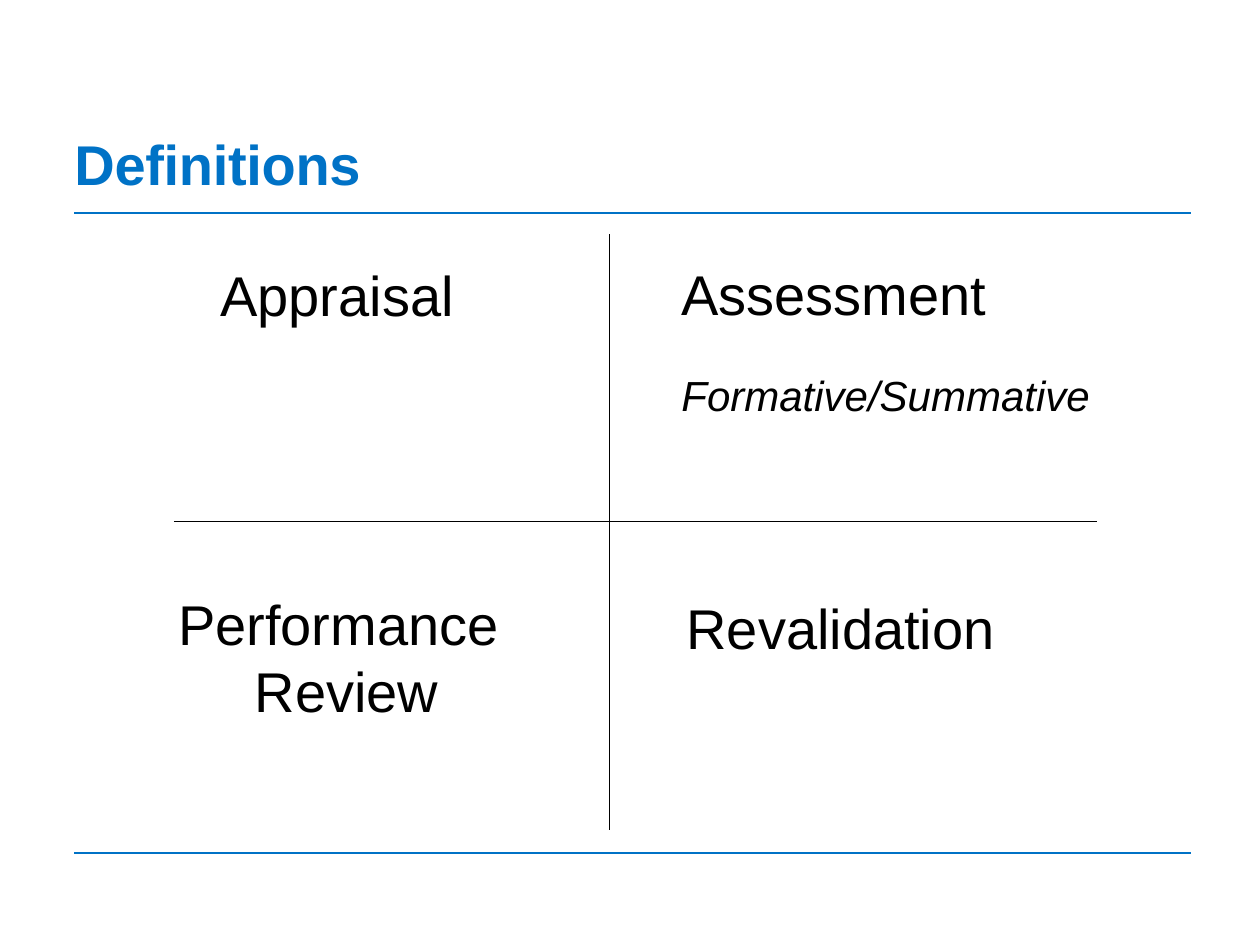
from typing import NamedTuple

from lxml.etree import SubElement
from pptx import Presentation
from pptx.dml.color import RGBColor
from pptx.enum.shapes import MSO_CONNECTOR
from pptx.enum.text import MSO_ANCHOR, MSO_AUTO_SIZE, PP_ALIGN
from pptx.oxml.ns import qn
from pptx.util import Inches, Pt

BLUE = "0072C6"
BLACK = "000000"


class Rule(NamedTuple):
    x1: float
    y1: float
    x2: float
    y2: float
    color: str
    width: float


class Label(NamedTuple):
    lines: tuple[str, ...]
    left: float
    top: float
    width: float
    height: float
    size: int = 32
    italic: bool = False
    wrap: bool = False
    align: PP_ALIGN = PP_ALIGN.LEFT


RULES = [
    Rule(0.59, 1.69, 9.45, 1.69, BLUE, 1.25),
    Rule(0.59, 6.77, 9.45, 6.77, BLUE, 1.25),
    Rule(4.84, 1.86, 4.84, 6.59, BLACK, 0.75),
    Rule(1.38, 4.14, 8.71, 4.14, BLACK, 0.75),
]

LABELS = [
    Label(("Appraisal",), 1.65, 2.02, 2.07, 0.64),
    Label(("Assessment",), 5.31, 2.01, 2.64, 0.64),
    Label(("Formative/Summative",), 5.31, 2.88, 3.7, 0.5, size=24, italic=True, wrap=True),
    Label(("Performance ", "Review"), 1.21, 4.63, 3.08, 1.18, wrap=True, align=PP_ALIGN.CENTER),
    Label(("Revalidation",), 5.35, 4.66, 2.67, 0.64),
]


def rgb(color: str) -> RGBColor:
    return RGBColor.from_string(color)


def style_font(font, size: int, color: str, bold: bool = False, italic: bool = False) -> None:
    font.name = "Arial"
    font.size = Pt(size)
    font.bold = bold
    font.italic = italic
    font.color.rgb = rgb(color)


def draw_rule(slide, rule: Rule) -> None:
    ends = [Inches(value) for value in rule[:4]]
    connector = slide.shapes.add_connector(MSO_CONNECTOR.STRAIGHT, *ends)
    connector.line.color.rgb = rgb(rule.color)
    connector.line.width = Pt(rule.width)
    SubElement(connector._element.spPr, qn("a:effectLst"))


def draw_label(slide, label: Label) -> None:
    box = slide.shapes.add_textbox(
        Inches(label.left), Inches(label.top), Inches(label.width), Inches(label.height)
    )
    frame = box.text_frame
    frame.word_wrap = label.wrap
    frame.auto_size = MSO_AUTO_SIZE.SHAPE_TO_FIT_TEXT
    frame.text = "\n".join(label.lines)
    for paragraph in frame.paragraphs:
        paragraph.alignment = label.align
        style_font(paragraph.font, label.size, BLACK, italic=label.italic)


def fill_title(slide, text: str) -> None:
    title = slide.shapes.title
    title.left, title.top = Inches(0.59), Inches(0.59)
    title.width, title.height = Inches(8.82), Inches(0.98)
    frame = title.text_frame
    frame.margin_left = frame.margin_top = frame.margin_right = frame.margin_bottom = 0
    frame.vertical_anchor = MSO_ANCHOR.BOTTOM
    frame.auto_size = MSO_AUTO_SIZE.NONE
    frame.text = text
    paragraph = frame.paragraphs[0]
    paragraph.alignment = PP_ALIGN.LEFT
    paragraph.line_spacing = 0.9
    style_font(paragraph.font, 32, BLUE, bold=True)
    paragraph.runs[0].font._element.set("spc", "-20")


def main() -> None:
    presentation = Presentation()
    presentation.slide_width = Inches(10)
    presentation.slide_height = Inches(7.5)
    title_only = presentation.slide_layouts[5]
    slide = presentation.slides.add_slide(title_only)
    fill_title(slide, "Definitions")
    for rule in RULES:
        draw_rule(slide, rule)
    for label in LABELS:
        draw_label(slide, label)
    presentation.save("out.pptx")


if __name__ == "__main__":
    main()
